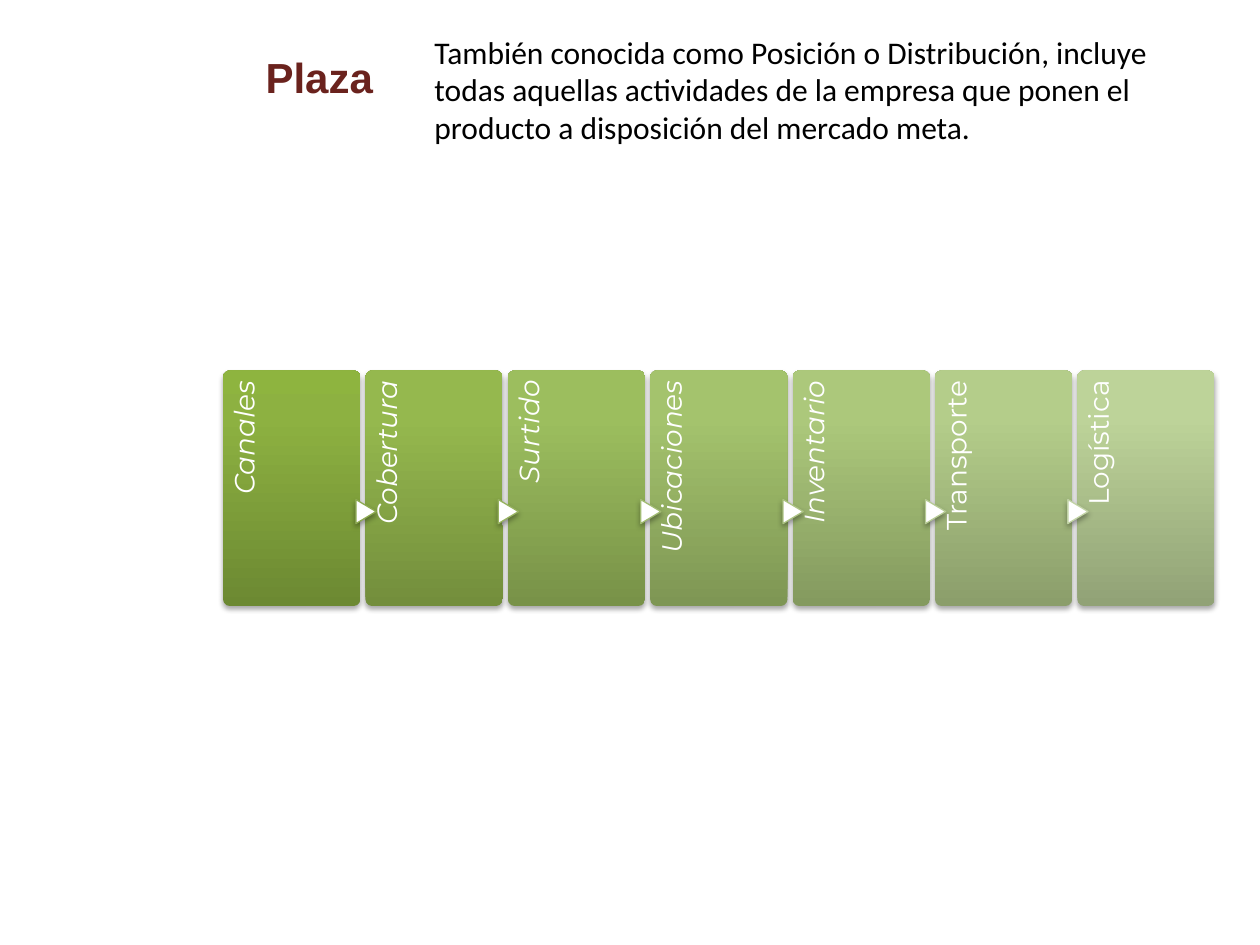
from copy import deepcopy

from pptx import Presentation
from pptx.dml.color import RGBColor
from pptx.enum.shapes import MSO_SHAPE
from pptx.enum.text import MSO_AUTO_SIZE, PP_ALIGN
from pptx.oxml.ns import qn
from pptx.util import Inches, Pt
from lxml import etree

ROUNDED = MSO_SHAPE.ROUNDED_RECTANGLE
TRIANGLE = MSO_SHAPE.FLOWCHART_EXTRACT
RIGHT = PP_ALIGN.RIGHT
GROW = MSO_AUTO_SIZE.SHAPE_TO_FIT_TEXT

COLORS = {"title": "6A221D", "body": "000000", "white": "FFFFFF", "shadow": "000000"}
FORMATS = {
    "title": {"name": "Arial", "size": Pt(24), "bold": True},
    "body": {"name": "Calibri", "size": Pt(18)},
    "label": {"name": "Montserrat", "size": Pt(16)},
}
STOPS = (0, 0.8, 1)

# label, italic, gradient from bottom to top, outline of the arrow before the card
CARDS = [
    ("Canales", True, ("6C8932", "8DB141", "8EB43F"), None),
    ("Cobertura", True, ("738E3C", "95B84E", "96BB4D"), "8DAA51"),
    ("Surtido", True, ("789248", "9CBE5E", "9EC05C"), "97B360"),
    ("Ubicaciones", True, ("7E9654", "A4C36D", "A5C56B"), "A1BB72"),
    ("Inventario", True, ("849A5F", "ACC87B", "ADCB7B"), "ACC383"),
    ("Transporte", False, ("8B9E6B", "B4CD8A", "B5D08A"), "B6CB94"),
    ("Logística", False, ("91A276", "BDD399", "BED599"), "C1D3A5"),
]
CARD_LEFT, CARD_TOP, CARD_PITCH = 1.77, 2.94, 1.13


def rgb(hex_color):
    return RGBColor.from_string(hex_color)


class SlideBuilder:
    def __init__(self, slide):
        self.slide = slide

    def shape(self, kind, x, y, w, h):
        s = self.slide.shapes.add_shape(kind, Inches(x), Inches(y), Inches(w), Inches(h))
        self.shadow(s)
        return s

    def shadow(self, s):
        """Give the shape a soft shadow falling straight down."""
        s.shadow.inherit = False
        effects = s._element.spPr.find(qn("a:effectLst"))
        outer = etree.SubElement(effects, qn("a:outerShdw"), blurRad=str(Pt(3.15)),
                                 dist=str(Pt(1.8)), dir="5400000", rotWithShape="0")
        color = etree.SubElement(outer, qn("a:srgbClr"), val=COLORS["shadow"])
        etree.SubElement(color, qn("a:alpha"), val="35000")

    def card(self, x, gradient):
        s = self.shape(ROUNDED, x, CARD_TOP, 1.09, 1.87)
        s.adjustments[0] = 0.05
        s.line.fill.background()
        s.fill.gradient()
        s.fill.gradient_angle = 90
        stop_list = s._element.spPr.find(".//" + qn("a:gsLst"))
        stop_list.append(deepcopy(stop_list[-1]))
        for stop, position, color in zip(s.fill.gradient_stops, STOPS, gradient):
            stop.position = position
            stop.color.rgb = rgb(color)

    def arrow(self, x, outline):
        s = self.shape(TRIANGLE, x, 3.98, 0.19, 0.16)
        s.rotation = 90
        s.fill.solid()
        s.fill.fore_color.rgb = rgb(COLORS["white"])
        s.line.color.rgb = rgb(outline)
        s.line.width = Pt(0.75)

    def text(self, words, box, style, color, wrap=True, italic=None):
        s = self.slide.shapes.add_textbox(*map(Inches, box))
        tf = s.text_frame
        tf.word_wrap = wrap
        r = tf.paragraphs[0].add_run()
        r.text = words
        for key, value in FORMATS[style].items():
            setattr(r.font, key, value)
        r.font.italic = italic
        r.font.color.rgb = rgb(COLORS[color])
        return s

    def label(self, words, x, italic):
        """Write the label upwards along the left edge of its card."""
        s = self.text(words, (x - 0.66, 3.6, 1.54, 0.22), "label", "white", italic=italic)
        s.rotation = 270
        tf = s.text_frame
        margins = {"margin_left": 0, "margin_top": 0.06, "margin_right": 0.08, "margin_bottom": 0}
        for key, value in margins.items():
            setattr(tf, key, Inches(value))
        p = tf.paragraphs[0]
        p.alignment = RIGHT
        p.line_spacing = 0.9


def main():
    prs = Presentation()
    prs.slide_width, prs.slide_height = Inches(10), Inches(7.5)
    builder = SlideBuilder(prs.slides.add_slide(prs.slide_layouts[6]))

    for i, (words, italic, gradient, outline) in enumerate(CARDS):
        x = CARD_LEFT + i * CARD_PITCH
        builder.card(x, gradient)
        builder.label(words, x, italic)
        if outline:
            builder.arrow(x - 0.09, outline)

    title = builder.text("Plaza", (2.01, 0.36, 1.06, 0.5), "title", "title", wrap=False)
    body = builder.text(
        "También conocida como Posición o Distribución, incluye todas aquellas "
        "actividades de la empresa que ponen el producto a disposición del mercado meta.",
        (3.35, 0.21, 6.14, 1.01), "body", "body")
    for s in (title, body):
        s.text_frame.auto_size = GROW

    prs.save("out.pptx")


if __name__ == "__main__":
    main()
